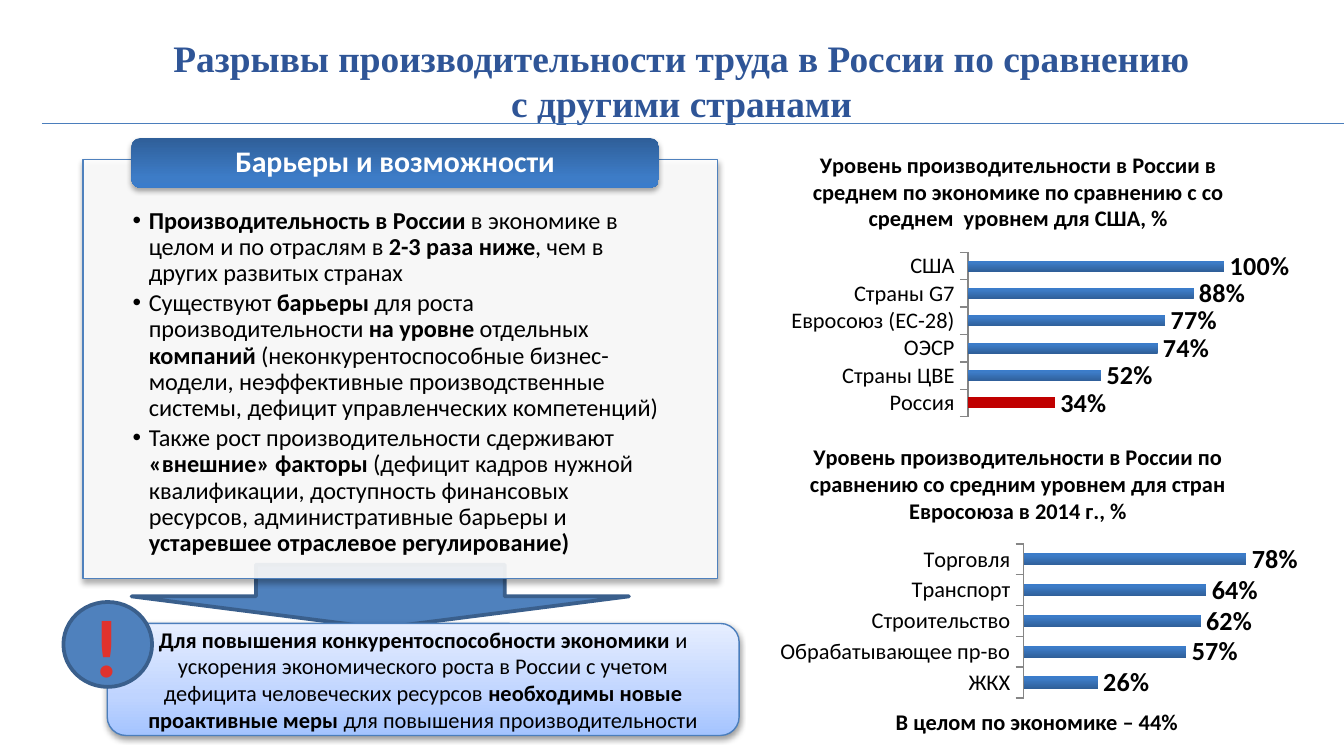
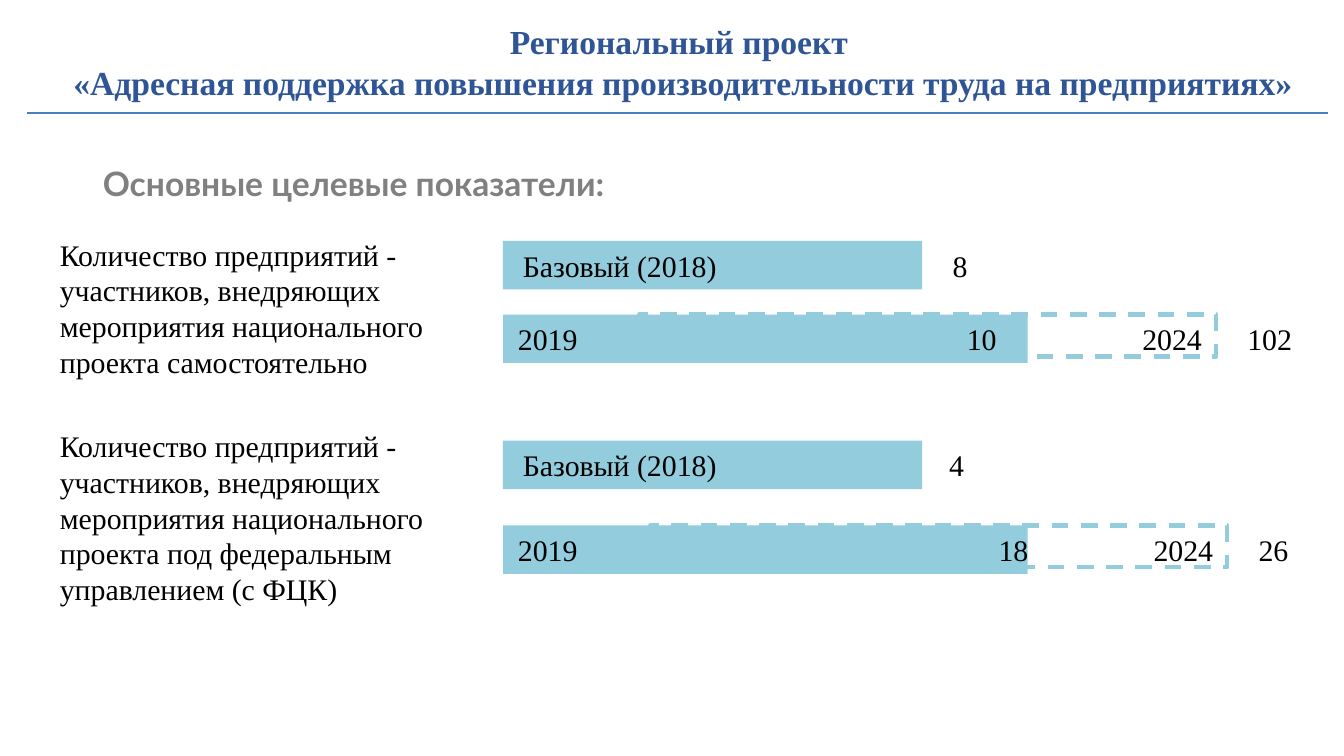
from copy import deepcopy

from lxml import etree
from pptx import Presentation
from pptx import util as u
from pptx.chart.data import CategoryChartData
from pptx.dml.color import RGBColor
from pptx.enum import chart as ch, dml, shapes, text
from pptx.oxml.ns import qn

BLUE, NAVY, RULE, TITLE = "4F81BD", "3A5F8C", "4B7EBC", "2F5597"
CYAN, RED, GREY, AXIS = "93CDDD", "C00000", "808080", "868686"
BLACK, WHITE = "000000", "FFFFFF"
DEEP_BLUE = [(0, "2F5F99"), (80, "3D7CC7"), (100, "3A7CCB")]
PALE_BLUE = [(0, "A4C4FF"), (35, "BFD4FF"), (100, "E6EEFF")]
EXCLAMATION = [(25, "E0322D"), (100, "A2201C")]
SERIF, SANS = "Times New Roman", "Calibri"
LEFT, CENTER, RIGHT = (text.PP_ALIGN.LEFT, text.PP_ALIGN.CENTER,
                       text.PP_ALIGN.RIGHT)
TOP, MIDDLE = text.MSO_ANCHOR.TOP, text.MSO_ANCHOR.MIDDLE
SHAPE = shapes.MSO_SHAPE


def rgb(color):
    return RGBColor.from_string(color)


def points(*values):
    return [u.Pt(v) for v in values]


def sub(parent, tag, **attrs):
    return etree.SubElement(parent, qn(tag), {k: str(v) for k, v in attrs.items()})


# Fills and effects
def gradient(fill, element, stops, angle):
    fill.gradient()
    fill.gradient_angle = (360 - angle) % 360
    gs_list = next(element.iter(qn("a:gsLst")))
    for gs in list(gs_list):
        gs_list.remove(gs)
    for pos, color in stops:
        gs = sub(gs_list, "a:gs", pos=pos * 1000)
        sub(gs, "a:srgbClr", val=color)


def add_shadow(s, alpha, blur, dist):
    effects = s._element.spPr.find(qn("a:effectLst"))
    shadow = sub(effects, "a:outerShdw", blurRad=u.Pt(blur), dist=u.Pt(dist),
                 dir=5400000, rotWithShape=0)
    sub(sub(shadow, "a:srgbClr", val=BLACK), "a:alpha", val=alpha * 1000)


# Text: **...** marks bold, \n breaks a line
def write(tf, *paragraphs, size, font=SANS, color=BLACK, bold=False, align=LEFT,
          spacing=None, after=None, indent=None):
    for i, content in enumerate(paragraphs):
        p = tf.paragraphs[0] if i == 0 else tf.add_paragraph()
        p.alignment = align
        if indent is not None:
            pPr = p._p.get_or_add_pPr()
            pPr.set("marL", str(u.Pt(indent)))
            pPr.set("indent", str(u.Pt(-indent)))
        if spacing:
            p.line_spacing = spacing
        if after is not None:
            p.space_before, p.space_after = u.Pt(0), u.Pt(after)
        for j, piece in enumerate(content.split("**")):
            for k, line in enumerate(piece.split("\n")):
                if k:
                    p.add_line_break()
                    br_format = deepcopy(r._r.rPr)
                    br_format.remove(br_format.find(qn("a:latin")))
                    p._p[-1].append(br_format)
                if not line:
                    continue
                r = p.add_run()
                r.text = line
                r.font.name, r.font.size = font, u.Pt(size)
                r.font.bold = bold or j % 2 == 1
                r.font.color.rgb = rgb(color)


def set_frame(tf, anchor=TOP, wrap=True, insets=(7.2, 3.6, 7.2, 3.6)):
    tf.auto_size = text.MSO_AUTO_SIZE.NONE
    tf.word_wrap = wrap
    tf.vertical_anchor = anchor
    (tf.margin_left, tf.margin_top,
     tf.margin_right, tf.margin_bottom) = points(*insets)


def place(s, box):
    s.left, s.top, s.width, s.height = points(*box)


def add_text(slide, box, content, wrap=True, **fmt):
    s = slide.shapes.add_textbox(*points(*box))
    set_frame(s.text_frame, wrap=wrap)
    write(s.text_frame, content, **fmt)
    return s


def add_box(slide, kind, box, fill=None, line=None, width=0.75, dash=False):
    s = slide.shapes.add_shape(kind, *points(*box))
    s.shadow.inherit = False
    if isinstance(fill, str):
        s.fill.solid()
        s.fill.fore_color.rgb = rgb(fill)
    if line:
        s.line.color.rgb = rgb(line)
        s.line.width = u.Pt(width)
        if dash:
            s.line.dash_style = dml.MSO_LINE.DASH
    else:
        s.line.fill.background()
    return s


# Title and rule shared by the slides
def add_header(slide, content, box, size, rule):
    title = slide.shapes.title
    place(title, box)
    set_frame(title.text_frame, MIDDLE)
    write(title.text_frame, content, size=size, font=SERIF, color=TITLE,
          bold=True, align=CENTER)
    x1, x2, y = rule
    line = slide.shapes.add_connector(shapes.MSO_CONNECTOR.STRAIGHT,
                                      *points(x1, y, x2, y))
    line.line.color.rgb = rgb(RULE)
    line.line.width = u.Pt(0.75)
    sub(line._element.spPr, "a:effectLst")


# Charts
def set_plot_layout(chart, x, y, w, h):
    area = chart._chartSpace.chart.plotArea
    for old in area.findall(qn("c:layout")):
        area.remove(old)
    layout = etree.Element(qn("c:layout"))
    area.insert(0, layout)
    manual = sub(layout, "c:manualLayout")
    for tag, val in (("layoutTarget", "inner"), ("xMode", "edge"),
                     ("yMode", "edge"), ("x", x), ("y", y), ("w", w), ("h", h)):
        sub(manual, f"c:{tag}", val=val)


def add_bar_chart(slide, box, title, data, maximum, layout, highlight=None):
    cd = CategoryChartData(number_format="0%")
    cd.categories = list(data)
    cd.add_series("Series 1", list(data.values()))
    chart = slide.shapes.add_chart(ch.XL_CHART_TYPE.BAR_CLUSTERED,
                                   *points(*box), cd).chart
    chart.has_legend = False
    chart.font.name, chart.font.size = SANS, u.Pt(12)
    chart.font.color.rgb = rgb(BLACK)
    chart.has_title = True
    write(chart.chart_title.text_frame, title, size=12, bold=True, align=CENTER)
    chart.chart_title.include_in_layout = False
    set_plot_layout(chart, *layout)

    values, cats = chart.value_axis, chart.category_axis
    values.minimum_scale, values.maximum_scale = 0, maximum
    values.has_major_gridlines = False
    values.visible = False
    cats.major_tick_mark = ch.XL_TICK_MARK.OUTSIDE
    cats.format.line.color.rgb = rgb(AXIS)
    cats.tick_labels.font.size = u.Pt(12)

    plot = chart.plots[0]
    plot.gap_width = 150
    plot.vary_by_categories = False
    plot.has_data_labels = True
    labels = plot.data_labels
    labels.show_value = True
    labels.position = ch.XL_LABEL_POSITION.OUTSIDE_END
    labels.number_format, labels.number_format_is_linked = "0%", False
    labels.font.name, labels.font.size, labels.font.bold = SANS, u.Pt(14), True
    labels.font.color.rgb = rgb(BLACK)

    series = plot.series[0]
    series.invert_if_negative = False
    gradient(series.format.fill, series._element, DEEP_BLUE, 270)
    if highlight is not None:
        fill = series.points[highlight].format.fill
        fill.solid()
        fill.fore_color.rgb = rgb(RED)


# Slide 1: barriers on the left, comparison charts on the right
def build_gaps(prs):
    slide = prs.slides.add_slide(prs.slide_layouts[1])
    body = slide.placeholders[1]
    add_box(slide, SHAPE.DOWN_ARROW, (70.5, 302.5, 266.5, 34), BLUE, NAVY, 2)
    add_header(slide, "Разрывы производительности труда в России по сравнению\n"
               "с другими странами", (25, 15, 680.5, 55.5), 20, (22.5, 720, 66.3))

    # Panel with bullets
    panel_box = (44.5, 85.5, 340, 224.5)
    panel = add_box(slide, SHAPE.RECTANGLE, panel_box, WHITE, BLUE)
    sub(next(panel._element.spPr.iter(qn("a:srgbClr"))), "a:alpha", val=90000)
    add_shadow(panel, 35, 3.1, 1.8)
    place(body, panel_box)
    set_frame(body.text_frame, insets=(26.6, 26, 26.6, 7.2))
    write(body.text_frame,
          "**Производительность в России** в экономике в целом и по отраслям в "
          "**2-3 раза ниже**, чем в других развитых странах",
          "Существуют **барьеры** для роста производительности **на уровне "
          "**отдельных\n**компаний** (неконкурентоспособные бизнес-модели, "
          "неэффективные производственные системы, дефицит управленческих "
          "компетенций)",
          "Также рост производительности сдерживают **«внешние» факторы** "
          "(дефицит кадров нужной квалификации, доступность финансовых ресурсов, "
          "административные барьеры и **устаревшее отраслевое регулирование)**",
          size=13, spacing=0.9, after=2, indent=8.64)
    slide.shapes._spTree.append(body._element)

    tab = add_box(slide, SHAPE.ROUNDED_RECTANGLE, (70.5, 74, 282.5, 26.5))
    gradient(tab.fill, tab._element, DEEP_BLUE, 90)
    add_shadow(tab, 35, 3.1, 1.8)
    set_frame(tab.text_frame, MIDDLE, insets=(9.4, 0, 9.4, 0))
    write(tab.text_frame, "Барьеры и возможности", size=16, color=WHITE,
          bold=True, align=CENTER, spacing=0.9)

    # Conclusion with exclamation mark
    callout = add_box(slide, SHAPE.ROUNDED_RECTANGLE, (57.5, 334, 338.5, 60),
                      line=RULE)
    gradient(callout.fill, callout._element, PALE_BLUE, 270)
    add_shadow(callout, 38, 3.1, 1.6)
    set_frame(callout.text_frame, MIDDLE)
    write(callout.text_frame,
          "**Для повышения конкурентоспособности экономики **и ускорения "
          "экономического роста в России с учетом\nдефицита человеческих ресурсов "
          "**необходимы новые проактивные меры **для повышения "
          "производительности", size=12, align=CENTER)
    add_box(slide, SHAPE.OVAL, (34, 322.5, 47.5, 45.5), BLUE, NAVY, 2)
    mark = add_text(slide, (42.5, 315.5, 29.5, 60.5), "!", wrap=False, size=44,
                    bold=True, align=CENTER)
    r = mark.text_frame.paragraphs[0].runs[0]
    gradient(r.font.fill, r._r, EXCLAMATION, 90)

    # Charts
    add_bar_chart(slide, (395.5, 71.5, 300, 153),
                  "Уровень производительности в России в среднем по экономике по "
                  "сравнению с со среднем  уровнем для США, %",
                  {"Россия": 0.34, "Страны ЦВЕ": 0.52, "ОЭСР": 0.74,
                   "Евросоюз (ЕС-28)": 0.77, "Страны G7": 0.88, "США": 1},
                  1.2, (0.41, 0.42, 0.55, 0.58), highlight=0)
    add_bar_chart(slide, (395.5, 228, 300, 147.5),
                  "Уровень производительности в России по сравнению со средним "
                  "уровнем для стран Евросоюза в 2014 г., %",
                  {"ЖКХ": 0.26, "Обрабатывающее пр-во": 0.57,
                   "Строительство": 0.62, "Транспорт": 0.64, "Торговля": 0.78},
                  0.9, (0.51, 0.43, 0.46, 0.56))
    add_text(slide, (433.5, 376, 244, 21.5), "В целом по экономике – 44%",
             size=12, bold=True, align=CENTER)


# One indicator: label, base bar, 2019 bar over the dashed 2024 goal
def add_indicator(slide, label, label_top, base_top, goal_top, goal_left,
                  base, current, goal):
    bar_left, goal_width = 269.5, 309
    goal_right = goal_left + goal_width
    add_box(slide, SHAPE.RECTANGLE, (goal_left, goal_top, goal_width, 22.5),
            WHITE, CYAN, 2.25, dash=True)
    for top, width in ((base_top, 224.5), (goal_top, 281)):
        add_box(slide, SHAPE.RECTANGLE, (bar_left, top, width, 26), CYAN)
    add_text(slide, (25, label_top, 247, 95), label, size=16, font=SERIF)
    for content, left, top, width in (
            ("Базовый (2018)", 271.5, base_top, 119.5),
            (base[0], base[1], base_top, 22),
            ("2019", bar_left, goal_top, 47),
            (current[0], current[1], goal_top, 31),
            ("2024", goal_right - 47.5, goal_top, 47),
            (goal, goal_right + 8.8, goal_top, 15 + 8 * len(goal))):
        add_text(slide, (left, top, width, 26.5), content, wrap=False, size=16,
                 font=SERIF, align=RIGHT)


# Slide 2: target indicators
def build_targets(prs):
    slide = prs.slides.add_slide(prs.slide_layouts[5])
    add_header(slide, "Региональный проект \n«Адресная поддержка повышения "
               "производительности труда на предприятиях»",
               (31, 15, 670, 36), 18, (14.5, 711.5, 60.5))
    add_text(slide, (48, 83.5, 299, 29), "Основные целевые показатели:",
             wrap=False, size=18, font="Lato", color=GREY, bold=True)
    label = ("Количество предприятий - участников, внедряющих мероприятия "
             "национального проекта ")
    add_indicator(slide, label + "самостоятельно", 123, 129, 168.5, 342.5,
                  ("8", 503.5), ("10", 510), "102")
    add_indicator(slide, label + "под федеральным управлением (с ФЦК)", 225.5,
                  236, 281.5, 348.5, ("4", 501.5), ("18", 527), "26")


def main():
    prs = Presentation()
    prs.slide_width, prs.slide_height = points(720, 405)
    build_gaps(prs)
    build_targets(prs)
    prs.save("out.pptx")


if __name__ == "__main__":
    main()
